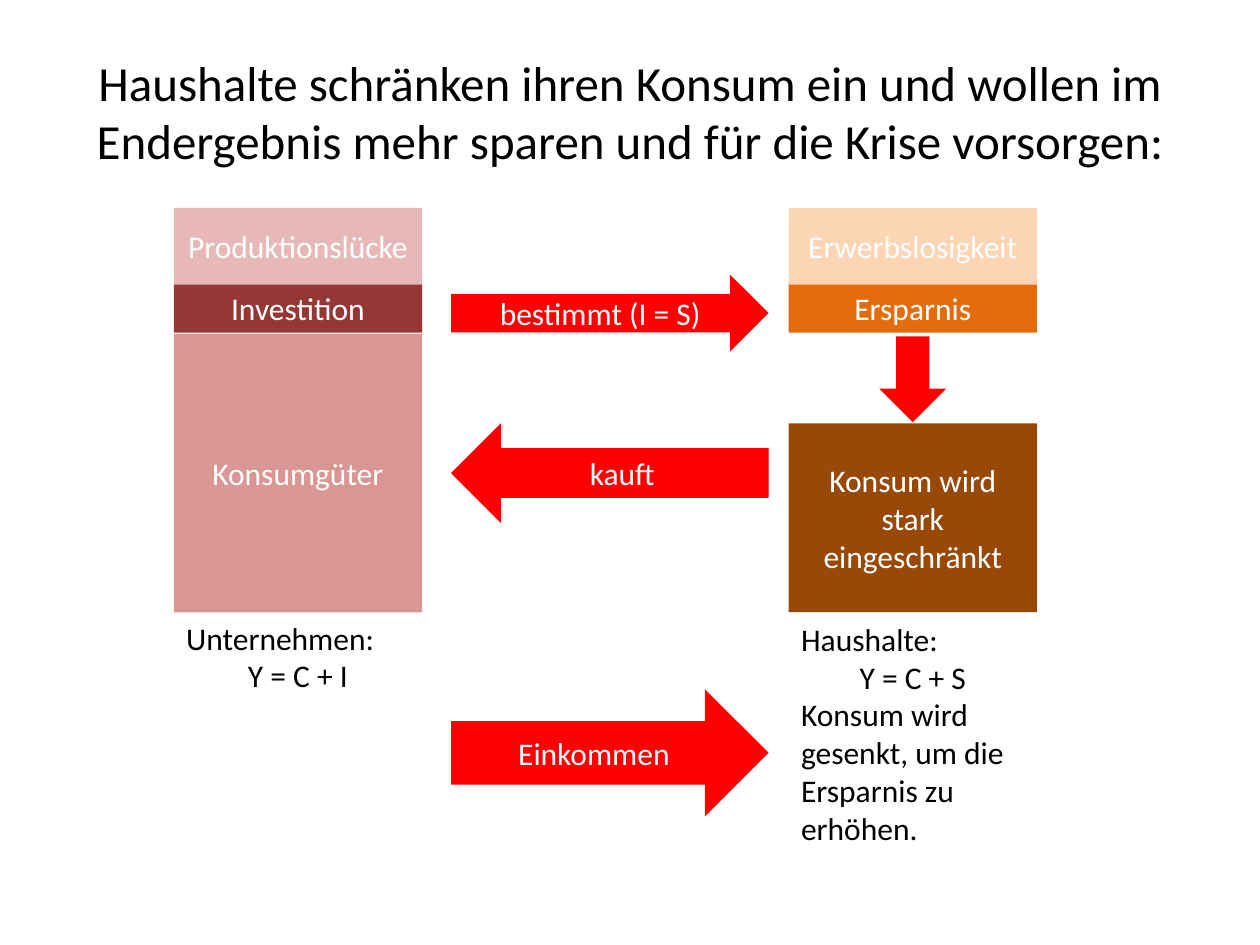
from dataclasses import dataclass
from typing import NamedTuple

from pptx import Presentation
from pptx.dml.color import RGBColor as Rgb
from pptx.enum.shapes import MSO_SHAPE as Kind
from pptx.enum.text import MSO_ANCHOR as Anchor, MSO_AUTO_SIZE as Fit, PP_ALIGN as Align
from pptx.util import Inches, Pt

HUES = {
    "black": "000000", "white": "FFFFFF", "red": "FF0000",
    "blush": "E6B9B8", "wine": "953735", "rose": "D99694",
    "peach": "FCD5B5", "orange": "E46C0A", "brown": "984807",
}


class Span(NamedTuple):
    start: float
    size: float


COLS = {
    "firm": Span(1.38, 1.97),
    "flow": Span(3.58, 2.52),
    "home": Span(6.26, 1.97),
    "drop": Span(6.98, 0.53),
    "full": Span(0.5, 9),
}
ROWS = {
    "title": Span(0.21, 1.34),
    "gap": Span(1.65, 0.61),
    "save": Span(2.25, 0.39),
    "goods": Span(2.65, 2.21),
    "spend": Span(3.36, 1.5),
    "fix": Span(2.18, 0.61),
    "fall": Span(2.67, 0.68),
    "buy": Span(3.36, 0.79),
    "earn": Span(5.47, 1.01),
    "firm note": Span(4.86, 0.71),
    "home note": Span(4.87, 1.92),
}


@dataclass(frozen=True)
class Block:
    col: str
    row: str
    hue: str
    text: str = ""
    kind: Kind = Kind.RECTANGLE


@dataclass(frozen=True)
class Note:
    col: str
    row: str
    lines: tuple


BLOCKS = [
    Block("firm", "goods", "rose", "Konsumgüter"),
    Block("firm", "save", "wine", "Investition"),
    Block("flow", "earn", "red", "Einkommen", Kind.RIGHT_ARROW),
    Block("home", "spend", "brown", "Konsum wird stark eingeschränkt"),
    Block("home", "save", "orange", "Ersparnis"),
    Block("flow", "buy", "red", "kauft", Kind.LEFT_ARROW),
    Block("firm", "gap", "blush", "Produktionslücke"),
    Block("home", "gap", "peach", "Erwerbslosigkeit"),
    Block("drop", "fall", "red", kind=Kind.DOWN_ARROW),
    Block("flow", "fix", "red", "bestimmt (I = S)", Kind.RIGHT_ARROW),
]
NOTES = [
    Note("firm", "firm note", (
        ("Unternehmen:", Align.LEFT),
        ("Y = C + I", Align.CENTER))),
    Note("home", "home note", (
        ("Haushalte:", Align.LEFT),
        ("Y = C + S", Align.CENTER),
        ("Konsum wird gesenkt, um die Ersparnis zu erhöhen.", Align.LEFT))),
]


def place(col: str, row: str) -> list:
    x, y = COLS[col], ROWS[row]
    return [Inches(n) for n in (x.start, y.start, x.size, y.size)]


def write(para, text: str, hue: str, size: int = 18, align=Align.CENTER) -> None:
    para.alignment = align
    run = para.add_run()
    run.text = text
    for name, value in {"name": "Calibri", "size": Pt(size)}.items():
        setattr(run.font, name, value)
    run.font.color.rgb = Rgb.from_string(HUES[hue])


def frame(shape, **format) -> None:
    for name, value in format.items():
        setattr(shape.text_frame, name, value)


def head(slide, text: str) -> None:
    title = slide.shapes.title
    spot = place("full", "title")
    for name, value in zip(("left", "top", "width", "height"), spot):
        setattr(title, name, value)
    frame(title, word_wrap=True, vertical_anchor=Anchor.MIDDLE)
    write(title.text_frame.paragraphs[0], text, "black", 28)


def draw(slide, block: Block) -> None:
    shape = slide.shapes.add_shape(block.kind, *place(block.col, block.row))
    shape.shadow.inherit = False
    shape.fill.solid()
    shape.fill.fore_color.rgb = Rgb.from_string(HUES[block.hue])
    shape.line.fill.background()
    frame(shape, word_wrap=True, vertical_anchor=Anchor.MIDDLE)
    if block.text:
        write(shape.text_frame.paragraphs[0], block.text, "white")


def jot(slide, note: Note) -> None:
    box = slide.shapes.add_textbox(*place(note.col, note.row))
    frame(box, word_wrap=True, auto_size=Fit.SHAPE_TO_FIT_TEXT)
    body = box.text_frame
    for index, (text, align) in enumerate(note.lines):
        para = body.add_paragraph() if index else body.paragraphs[0]
        write(para, text, "black", align=align)


def main() -> None:
    deck = Presentation()
    deck.slide_width, deck.slide_height = Inches(10), Inches(7.5)
    slide = deck.slides.add_slide(deck.slide_layouts[5])
    head(slide, "Haushalte schränken ihren Konsum ein und wollen im "
                "Endergebnis mehr sparen und für die Krise vorsorgen:")
    for block in BLOCKS:
        draw(slide, block)
    for note in NOTES:
        jot(slide, note)
    deck.save("out.pptx")


if __name__ == "__main__":
    main()
